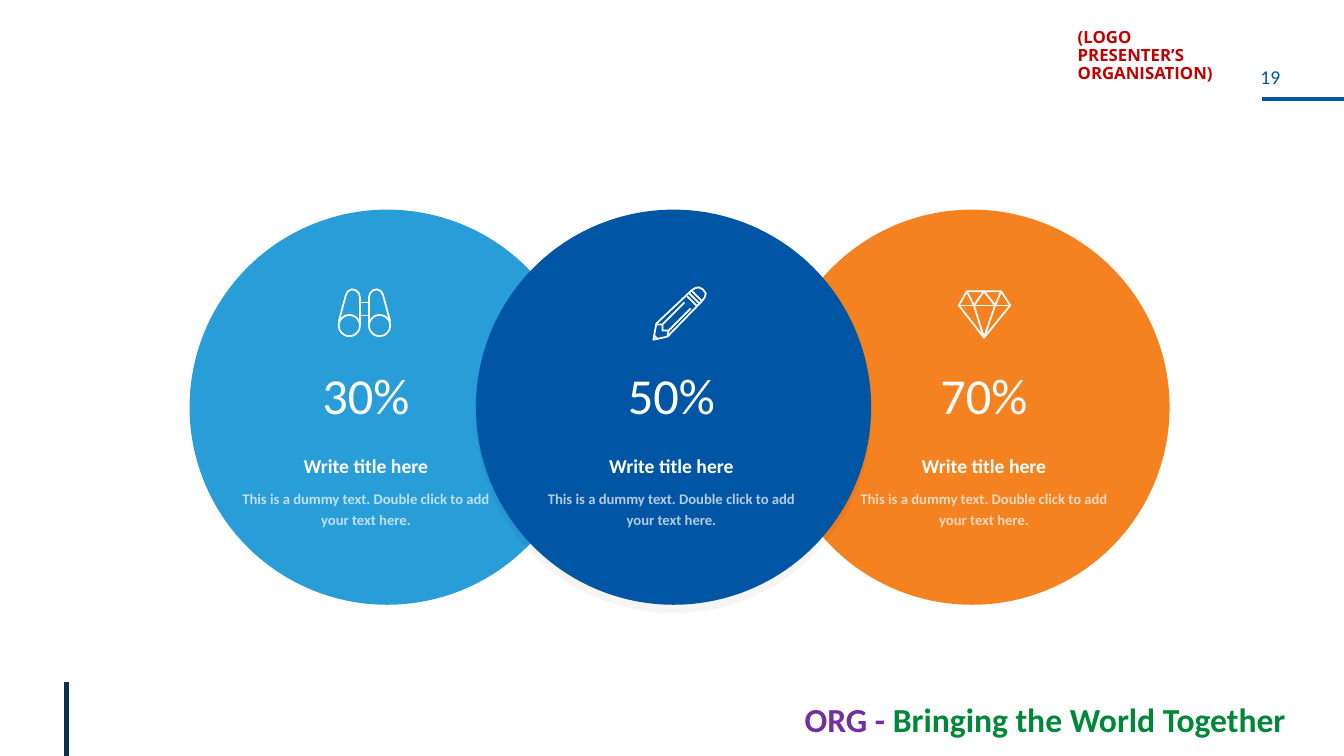
import math
from lxml import etree
from pptx import Presentation
from pptx.dml.color import RGBColor
from pptx.enum import shapes, text
from pptx.oxml import ns
from pptx.util import Inches, Pt

HUES = {"sky": "289DD8", "blue": "0055A5", "orange": "F58220", "white": "FFFFFF",
        "navy": "0A324B", "purple": "7030A0", "green": "008739", "red": "C00000", "black": "000000"}


def ring(x, y, r):
    turns = [math.tau * i / 36 for i in range(37)]
    return [(x + r * math.cos(t), y + r * math.sin(t)) for t in turns]


def flip(path):
    return [(53 - x, y) for x, y in path]


BARREL = [(1, 33), (8, 7), (10, 3), (14, 1), (18, 2), (21, 5), (22, 9), (22, 37)]
LENS = ring(11.5, 37, 10.5)
GLASS = [BARREL, flip(BARREL), LENS, flip(LENS), [(22, 14), (31, 14)], [(22, 27), (31, 27)]]
PENCIL = [
    [(1, 53), (4, 37), (39, 4), (42, 2), (46, 1), (50, 3), (53, 7), (52, 11), (49, 15), (15, 50), (1, 53)],
    [(4, 38), (10, 38), (10, 44), (16, 44), (15, 50)],
    [(10, 38), (32, 16)], [(16, 44), (38, 22)], [(2, 49), (5, 52)],
    *[[(x, 44.5 - x), (x + 9.5, 54 - x)] for x in (34.5, 37, 39.5)],
]
GEM = [
    [(9, 1), (43, 1), (52, 15), (26, 47), (1, 15), (9, 1)],
    [(1, 15), (52, 15)],
    [(9, 1), (16, 15), (26, 1), (37, 15), (43, 1)],
    [(16, 15), (26, 47), (37, 15)],
]


def tint(name):
    return RGBColor.from_string(HUES[name])


def style(item, size, hue, bold=False, face="Calibri"):
    item.font.size = Pt(size)
    item.font.name = face
    item.font.bold = bold
    item.font.fill.solid()
    item.font.fill.fore_color.rgb = tint(hue)


def label(slide, box, words, pad=(0, 0.05), wrap=False, align=text.PP_ALIGN.CENTER):
    frame = slide.shapes.add_textbox(*map(Inches, box)).text_frame
    frame.margin_left = frame.margin_right = Inches(pad[0])
    frame.margin_top = frame.margin_bottom = Inches(pad[1])
    frame.word_wrap = wrap
    frame.text = words
    for para in frame.paragraphs:
        para.alignment = align
    return frame.paragraphs


def rule(slide, start, end, hue):
    line = slide.shapes.add_connector(shapes.MSO_CONNECTOR.STRAIGHT, *map(Inches, start + end))
    line.line.color.rgb = tint(hue)
    line.line.width = Pt(3)
    etree.SubElement(line._element.spPr, ns.qn("a:effectLst"))


def frame(slide, wide, high):
    motto = label(slide, (wide - 5.81, high - 0.62, 5.69, 0.5), "", (0.1, 0.05))[0]
    for words, hue in (("ORG - ", "purple"), ("Bringing the World Together", "green")):
        run = motto.add_run()
        run.text = words
        style(run, 24, hue, True)
    rule(slide, (wide - 0.81, 0.98), (wide, 0.98), "blue")
    style(label(slide, (wide - 1.33, 0.64, 1.2, 0.33), "19", (0, 0))[0], 14, "blue")
    rule(slide, (0.66, high - 0.73), (0.66, high), "navy")
    logo = label(slide, (wide - 2.74, 0.24, 1.59, 1.01), "(LOGO PRESENTER’S ORGANISATION)",
                 (0.1, 0.05), True, text.PP_ALIGN.LEFT)[0]
    logo.line_spacing = 0.9
    style(logo, 12, "red", True, "Open Sans")


def disc(slide, left, top, size, hue, shade):
    oval = slide.shapes.add_shape(shapes.MSO_SHAPE.OVAL, *map(Inches, (left, top, size, size)))
    oval.shadow.inherit = False
    oval.fill.solid()
    oval.fill.fore_color.rgb = tint(hue)
    oval.line.fill.background()
    if shade:
        cast = etree.SubElement(oval._element.spPr.find(ns.qn("a:effectLst")), ns.qn("a:outerShdw"),
                                blurRad="0", dist=str(Pt(6)), dir="5400000", algn="t", rotWithShape="0")
        ink = etree.SubElement(cast, ns.qn("a:srgbClr"), val=HUES["black"])
        etree.SubElement(ink, ns.qn("a:alpha"), val="4000")


def icon(slide, left, top, paths):
    paths = [[(x * 10, y * 10) for x, y in path] for path in paths]
    pen = slide.shapes.build_freeform(*paths[0][0], scale=Inches(1) / 1000)
    for path in paths:
        pen.move_to(*path[0])
        pen.add_line_segments(path[1:], close=path[0] == path[-1])
    art = pen.convert_to_shape(Inches(left), Inches(top))
    art.shadow.inherit = False
    art.fill.background()
    art.line.color.rgb = tint("white")
    art.line.width = Pt(1.25)


def facts(slide, mid, top, share):
    style(label(slide, (mid - 0.5, top, 1, 0.71), share)[0], 36, "white")
    head, note = label(slide, (mid - 1.25, top + 0.85, 2.5, 0.89),
                       "Write title here\nThis is a dummy text. Double click to add your text here.", wrap=True)
    head.line_spacing = note.line_spacing = 1.2
    note.space_before = Pt(6)
    style(head, 14, "white", True)
    style(note, 10.5, "white", True)
    for ink in note._p.iter(ns.qn("a:srgbClr")):
        etree.SubElement(ink, ns.qn("a:alpha"), val="70000")


def trio(slide, top):
    discs = ((1.88, "sky", False), (7.68, "orange", False), (4.72, "blue", True))
    for left, hue, shade in discs:
        disc(slide, left, top, 3.92, hue, shade)
    parts = ((3.63, "30%", 3.35, 0.78, GLASS), (6.66, "50%", 6.47, 0.76, PENCIL), (9.76, "70%", 9.5, 0.8, GEM))
    for mid, share, left, drop, paths in parts:
        icon(slide, left, top + drop, paths)
        facts(slide, mid, top + 1.48, share)


def main():
    deck = Presentation()
    deck.slide_width, deck.slide_height = Inches(13.33), Inches(7.5)
    slide = deck.slides.add_slide(deck.slide_layouts[6])
    frame(slide, 13.33, 7.5)
    trio(slide, 2.08)
    deck.save("out.pptx")


if __name__ == "__main__":
    main()
